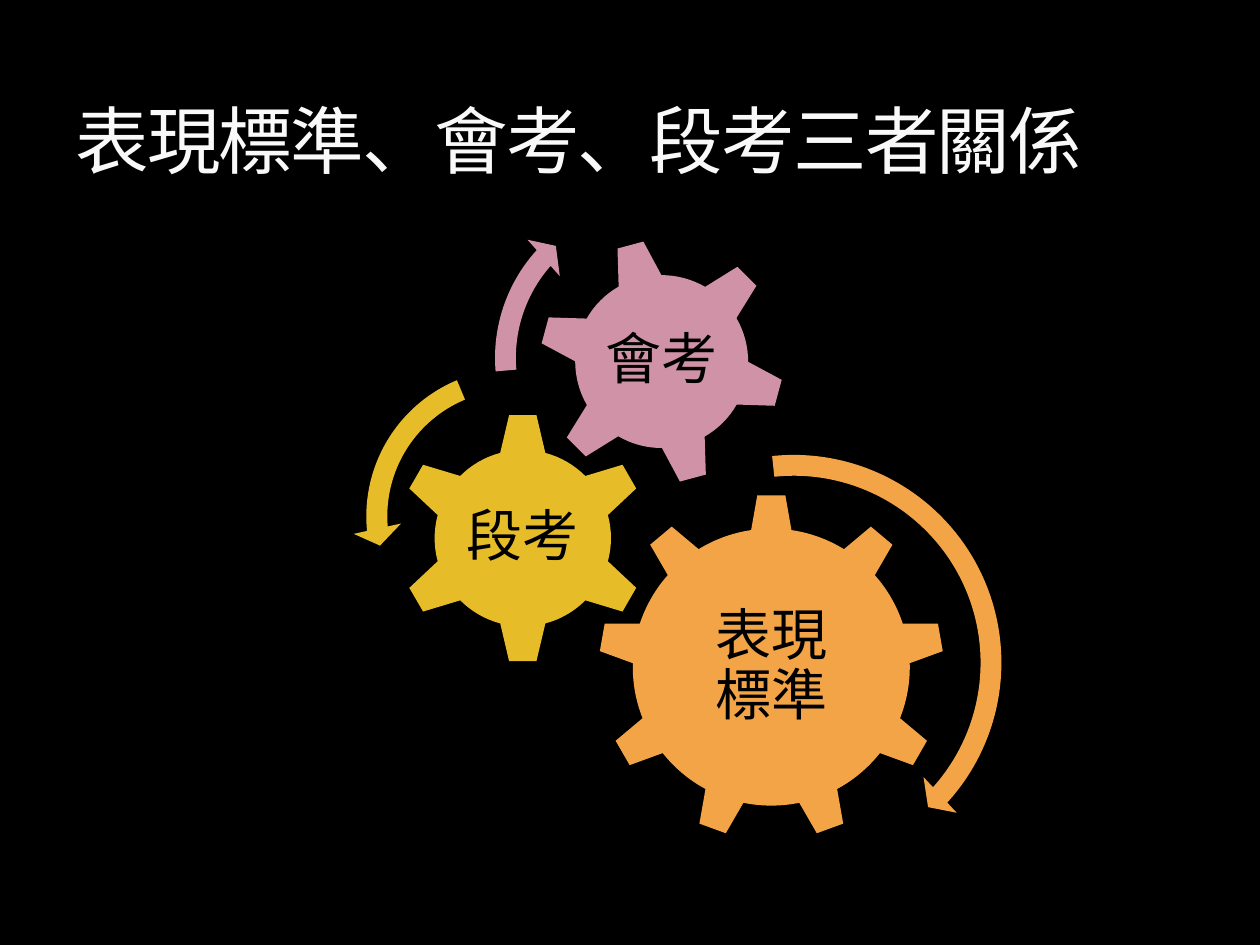
from lxml import etree
from pptx import Presentation
from pptx import util as u
from pptx.dml.color import RGBColor
from pptx.enum import shapes, text
from pptx.oxml.ns import qn

BLACK = RGBColor(0x00, 0x00, 0x00)
WHITE = RGBColor(0xF9, 0xF9, 0xF9)
ORANGE = RGBColor(0xF3, 0xA4, 0x47)
GOLD = RGBColor(0xE7, 0xBC, 0x29)
PINK = RGBColor(0xD0, 0x92, 0xA7)
FONT = "Noto Sans CJK SC"
KIND = shapes.MSO_SHAPE
MIDDLE = text.MSO_ANCHOR.MIDDLE
CENTER = text.PP_ALIGN.CENTER


def write(slide, box, words, size, color, anchor, align):
    """Place a wrapped text box and return its paragraph."""
    frame = slide.shapes.add_textbox(*map(u.Cm, box)).text_frame
    frame.word_wrap = True
    frame.vertical_anchor = anchor
    para = frame.paragraphs[0]
    para.text = words
    para.alignment = align
    font = para.font
    font.size = u.Pt(size)
    font.name = FONT
    font.color.rgb = color
    props = para._p.pPr.find(qn("a:defRPr"))
    etree.SubElement(props, qn("a:ea")).set("typeface", FONT)
    return para


def draw(slide, kind, box, color):
    """Place a plain square shape from its left, top and side."""
    left, top, side = map(u.Cm, box)
    shape = slide.shapes.add_shape(kind, left, top, side, side)
    shape.shadow.inherit = False
    shape.fill.solid()
    shape.fill.fore_color.rgb = color
    shape.line.fill.background()
    return shape


def gear(slide, kind, box, color, words, width, turn=0):
    """Draw a gear with an upright label at its centre."""
    draw(slide, kind, box, color).rotation = turn
    left, top, side = box
    gap = (side - width) / 2
    para = write(slide, (left + gap, top + gap, width, width),
                 words, 32, BLACK, MIDDLE, CENTER)
    para.line_spacing = 0.9


def arrow(slide, kind, box, color, bends):
    """Draw a curved arrow whose bends are given in percent."""
    shape = draw(slide, kind, box, color)
    for spot, bend in enumerate(bends):
        shape.adjustments[spot] = bend / 100


def title(slide, box):
    """Write the slide title at the foot of its box."""
    para = write(slide, box, "表現標準、會考、段考三者關係", 42, WHITE,
                 text.MSO_ANCHOR.BOTTOM, text.PP_ALIGN.LEFT)
    para._p.pPr.find(qn("a:defRPr")).set("spc", "-100")


def gears(slide, box):
    """Draw the three gears and their arrows inside the box."""
    x, y = box
    gear(slide, KIND.GEAR_9, (x + 4.95, y + 6.25, 6.98), ORANGE, "表現\v標準", 4.17)
    gear(slide, KIND.GEAR_6, (x + 0.89, y + 4.6, 5.08), GOLD, "段考", 2.79)
    gear(slide, KIND.GEAR_6, (x + 3.74, y + 1.09, 4.98), PINK, "會考", 2.79, 345)
    arrow(slide, KIND.CIRCULAR_ARROW, (x + 4.42, y + 5.18, 8.94), ORANGE,
          (4.7, 299, 2524.5, 15843.4, 5.5))
    arrow(slide, KIND.LEFT_CIRCULAR_ARROW, (x, y + 3.45, 6.5), GOLD,
          (6.5, 430, 10489.1, 14837.8, 7.5))
    arrow(slide, KIND.CIRCULAR_ARROW, (x + 2.59, y, 7.01), PINK,
          (6, 394.1, 13313.8, 10508.2, 7))


def main():
    """Build the slide and save it."""
    deck = Presentation()
    deck.slide_width, deck.slide_height = u.Cm(25.4), u.Cm(19.05)
    slide = deck.slides.add_slide(deck.slide_layouts[6])
    back = slide.background.fill
    back.solid()
    back.fore_color.rgb = BLACK
    gears(slide, (7.11, 3.71))
    title(slide, (1.27, 0.43, 22.86, 3.38))
    deck.save("out.pptx")


if __name__ == "__main__":
    main()
